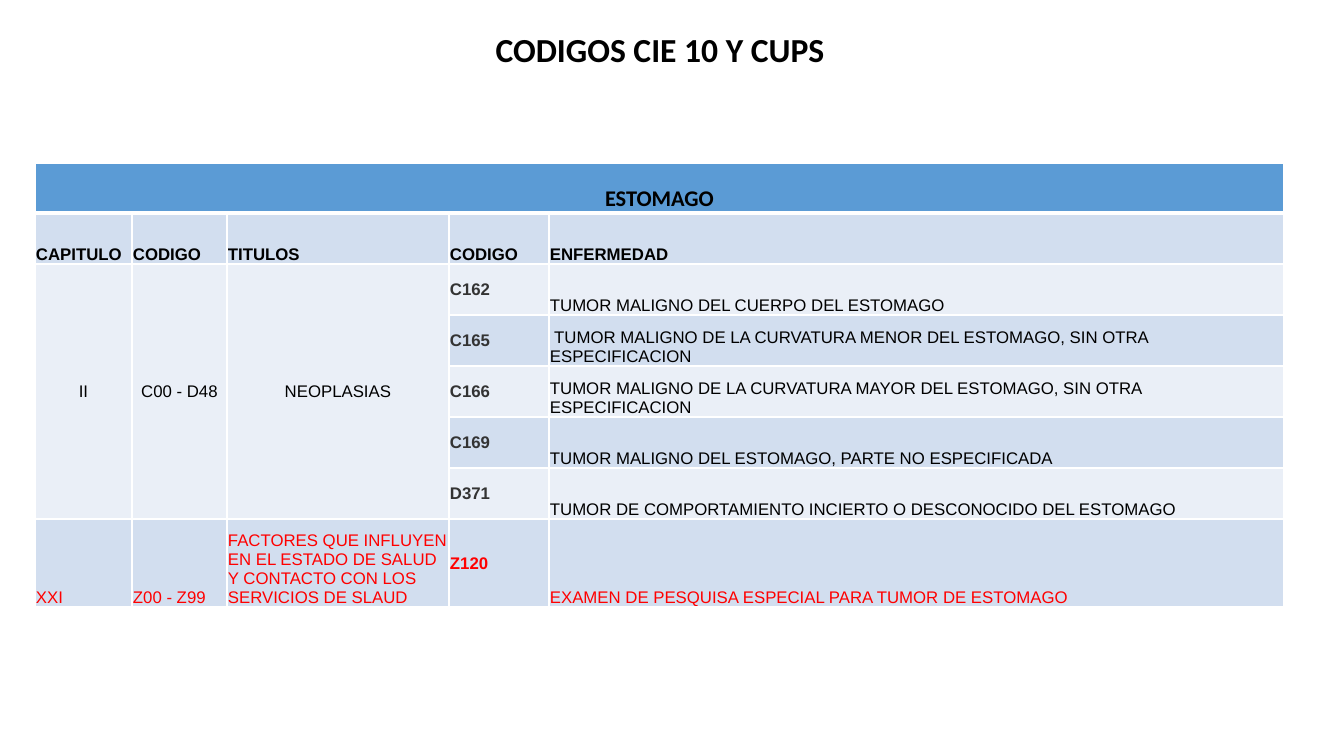
from dataclasses import dataclass

from pptx import Presentation
from pptx.dml.color import RGBColor
from pptx.enum.text import MSO_ANCHOR, PP_ALIGN
from pptx.oxml import parse_xml
from pptx.oxml.ns import nsdecls
from pptx.table import Table, _Cell
from pptx.text.text import TextFrame
from pptx.util import Pt

PX = 914400 / 100.8
HUES = {
    "black": "000000", "grey": "333333", "red": "FF0000", "white": "FFFFFF",
    "head": "5B9BD5", "dark": "D2DEEF", "light": "EAEFF7",
}
LEFT, MID = PP_ALIGN.LEFT, PP_ALIGN.CENTER
WIDTHS = [97, 95, 222, 100, 735]
HEIGHTS = [50] + [51] * 6 + [88]


@dataclass
class Entry:
    row: int
    col: int
    text: str
    hue: str = "black"
    bold: bool = False
    align: PP_ALIGN = LEFT
    anchor: MSO_ANCHOR = MSO_ANCHOR.BOTTOM
    size: int = 12
    face: str = "Arial"


def px(count: int) -> int:
    return round(count * PX)


def write(frame: TextFrame, text: str, *, size: int, face: str, hue: str,
          bold: bool, align: PP_ALIGN) -> None:
    frame.word_wrap = True
    para = frame.paragraphs[0]
    para.alignment = align
    run = para.add_run()
    run.text = text
    font = run.font
    font.size, font.name, font.bold = Pt(size), face, bold
    font.color.rgb = RGBColor.from_string(HUES[hue])


def edge(cell: _Cell, row: int) -> None:
    """Draw white borders, with a thick rule below the heading row."""
    wide = {"T": 3 if row == 1 else 1, "B": 3 if row == 0 else 1}
    props = cell._tc.get_or_add_tcPr()
    for spot, side in enumerate("LRTB"):
        props.insert(spot, parse_xml(
            f'<a:ln{side} {nsdecls("a")} w="{Pt(wide.get(side, 1))}"><a:solidFill>'
            f'<a:srgbClr val="{HUES["white"]}"/></a:solidFill></a:ln{side}>'))


def paint(cell: _Cell, row: int) -> None:
    hue = "head" if row == 0 else "dark" if row % 2 else "light"
    cell.fill.solid()
    cell.fill.fore_color.rgb = RGBColor.from_string(HUES[hue])
    cell.margin_left = cell.margin_right = cell.margin_top = px(1)
    cell.margin_bottom = 0
    edge(cell, row)


def enter(table: Table, item: Entry) -> None:
    cell = table.cell(item.row, item.col)
    cell.vertical_anchor = item.anchor
    write(cell.text_frame, item.text, size=item.size, face=item.face,
          hue=item.hue, bold=item.bold, align=item.align)


def entries() -> list[Entry]:
    middle = MSO_ANCHOR.MIDDLE
    items = [Entry(0, 0, "ESTOMAGO", bold=True, align=MID, size=16, face="Calibri")]
    # Column heads
    heads = ["CAPITULO", "CODIGO", "TITULOS", "CODIGO", "ENFERMEDAD"]
    items += [Entry(1, col, text, bold=True) for col, text in enumerate(heads)]
    # Chapters
    group = ["II", "C00 - D48", "NEOPLASIAS"]
    items += [Entry(2, col, text, align=MID, anchor=middle)
              for col, text in enumerate(group)]
    last = ["XXI", "Z00 - Z99", "FACTORES QUE INFLUYEN EN EL ESTADO DE SALUD "
            "Y CONTACTO CON LOS SERVICIOS DE SLAUD"]
    items += [Entry(7, col, text, "red") for col, text in enumerate(last)]
    # Diseases
    codes = [
        ("C162", "TUMOR MALIGNO DEL CUERPO DEL ESTOMAGO"),
        ("C165", " TUMOR MALIGNO DE LA CURVATURA MENOR DEL ESTOMAGO, SIN OTRA ESPECIFICACION"),
        ("C166", "TUMOR MALIGNO DE LA CURVATURA MAYOR DEL ESTOMAGO, SIN OTRA ESPECIFICACION"),
        ("C169", "TUMOR MALIGNO DEL ESTOMAGO, PARTE NO ESPECIFICADA"),
        ("D371", "TUMOR DE COMPORTAMIENTO INCIERTO O DESCONOCIDO DEL ESTOMAGO"),
        ("Z120", "EXAMEN DE PESQUISA ESPECIAL PARA TUMOR DE ESTOMAGO"),
    ]
    for row, (code, name) in enumerate(codes, 2):
        red = row == 7
        items.append(Entry(row, 3, code, "red" if red else "grey", True,
                           PP_ALIGN.JUSTIFY, middle))
        items.append(Entry(row, 4, name, "red" if red else "black"))
    return items


def main() -> None:
    deck = Presentation()
    deck.slide_width, deck.slide_height = px(1344), px(756)
    slide = deck.slides.add_slide(deck.slide_layouts[5])

    # Title
    title = slide.shapes.title
    title.left, title.top, title.width, title.height = map(px, (146, 24, 1028, 50))
    write(title.text_frame, "CODIGOS CIE 10 Y CUPS", size=24, face="Calibri",
          hue="black", bold=True, align=MID)

    # Table grid
    table = slide.shapes.add_table(
        len(HEIGHTS), len(WIDTHS), px(35), px(163),
        px(sum(WIDTHS)), px(sum(HEIGHTS))).table
    for col, width in zip(table.columns, WIDTHS):
        col.width = px(width)
    for row, high in zip(table.rows, HEIGHTS):
        row.height = px(high)
    for row in range(len(HEIGHTS)):
        for col in range(len(WIDTHS)):
            paint(table.cell(row, col), row)

    # Merged cells and wording
    table.cell(0, 0).merge(table.cell(0, 4))
    for col in range(3):
        table.cell(2, col).merge(table.cell(6, col))
    for item in entries():
        enter(table, item)

    deck.save("out.pptx")


if __name__ == "__main__":
    main()
